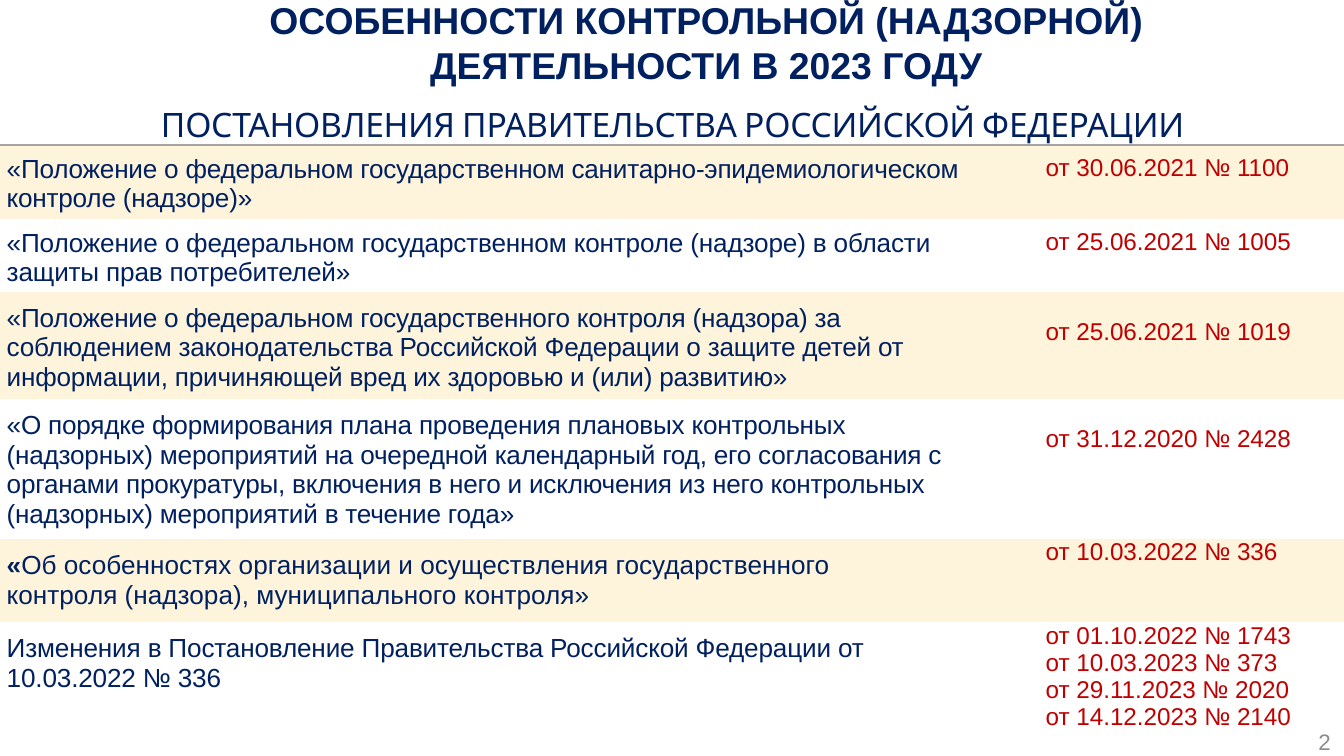
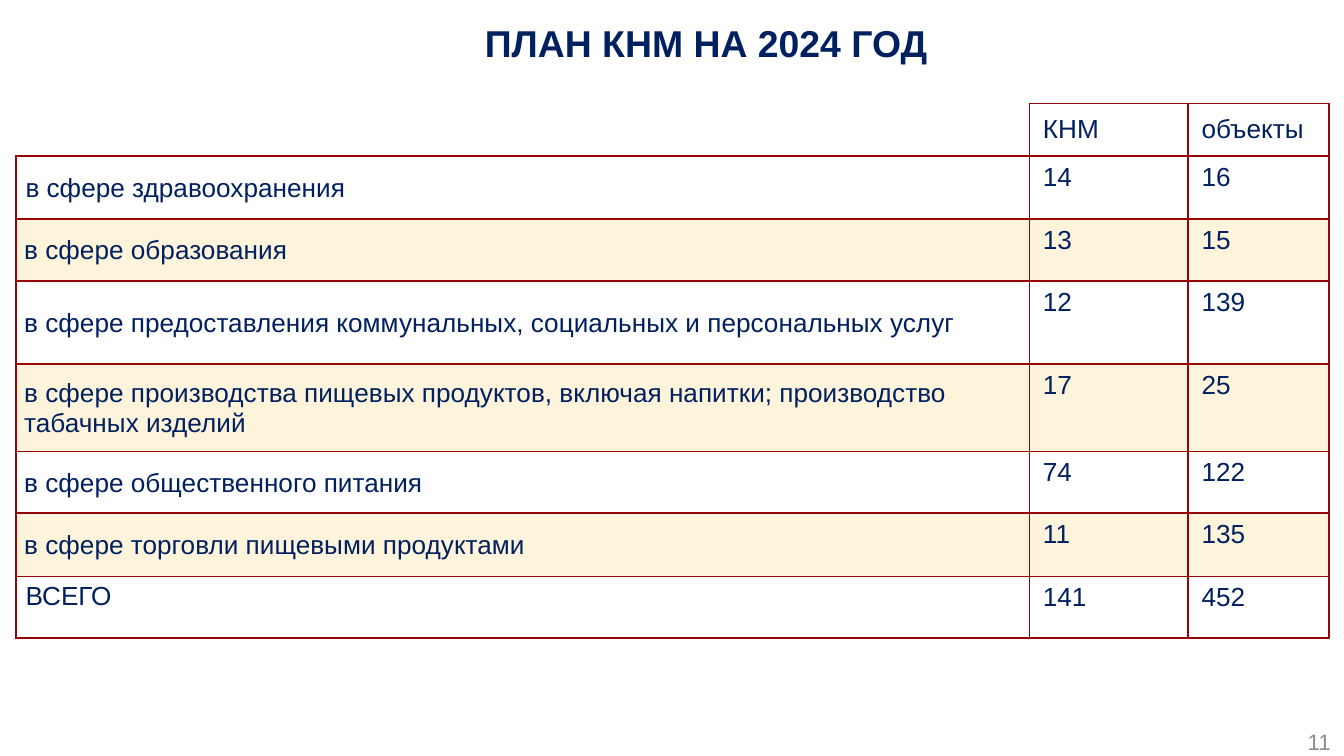
from dataclasses import dataclass

from lxml import etree
from pptx import Presentation
from pptx.dml.color import RGBColor
from pptx.enum.text import MSO_ANCHOR, PP_ALIGN
from pptx.oxml.ns import qn
from pptx.util import Inches, Pt

LEFT, CENTER, RIGHT = PP_ALIGN.LEFT, PP_ALIGN.CENTER, PP_ALIGN.RIGHT
TOP, MIDDLE = MSO_ANCHOR.TOP, MSO_ANCHOR.MIDDLE
PLAIN_TABLE_STYLE = "{2D5ABB26-0587-4C30-8999-92F81FD0307C}"
SLIDE_WIDTH = 10
SLIDE_HEIGHT = SLIDE_WIDTH * 9 / 16


@dataclass(frozen=True)
class Theme:
    navy: str = "002060"
    red: str = "C00000"
    gray: str = "8C8C8C"
    cream: str = "FEF4DC"
    rule: str = "A4A4A4"
    grid: str = "980507"
    font: str = "Arial"
    subtitle_font: str = "Cabin"
    title_size: float = 20
    subtitle_size: float = 18
    body_size: float = 14
    date_size: float = 13
    number_size: float = 12


THEME = Theme()

# Content: slide 1
DECREES_TITLE = "ОСОБЕННОСТИ КОНТРОЛЬНОЙ (НАДЗОРНОЙ)\vДЕЯТЕЛЬНОСТИ В 2023 ГОДУ"
DECREES_SUBTITLE = "ПОСТАНОВЛЕНИЯ ПРАВИТЕЛЬСТВА РОССИЙСКОЙ ФЕДЕРАЦИИ"
DECREE_COLUMNS = [7.2, 2.81]
# Row height, name, dates, top margins of both cells, right margin and tracking of the name
DECREES = [
    (0.55, "«Положение о федеральном государственном "
           "санитарно-эпидемиологическом контроле (надзоре)»",
     ["от 30.06.2021 № 1100"], 0.07, 0.07, 0, -0.15),
    (0.54, "«Положение о федеральном государственном контроле (надзоре) "
           "в области защиты прав потребителей»",
     ["от 25.06.2021 № 1005"], 0.07, 0.07, 0, -0.1),
    (0.8, "«Положение о федеральном государственного контроля (надзора) за "
          "соблюдением законодательства Российской Федерации о защите детей от "
          "информации, причиняющей вред их здоровью и (или) развитию»",
     ["от 25.06.2021 № 1019"], 0.09, 0.2, 0, -0.15),
    (1.04, "«О порядке формирования плана проведения плановых контрольных "
           "(надзорных) мероприятий на очередной календарный год, его "
           "согласования с органами прокуратуры, включения в него и исключения "
           "из него контрольных (надзорных) мероприятий в течение года»",
     ["от 31.12.2020 № 2428"], 0.09, 0.2, 0, -0.15),
    (0.62, [("«", True),
            ("Об особенностях организации и осуществления государственного "
             "контроля (надзора), муниципального контроля»", False)],
     ["от 10.03.2022 № 336"], 0.09, 0, 0.5, 0),
    (0.82, "Изменения в Постановление Правительства Российской Федерации от "
           "10.03.2022 № 336",
     ["от 01.10.2022 № 1743", "от 10.03.2023 № 373",
      "от 29.11.2023 № 2020", "от 14.12.2023 № 2140"], 0.09, 0, 0, -0.1),
]

# Content: slide 2
PLAN_TITLE = "ПЛАН КНМ НА 2024 ГОД"
PLAN_COLUMNS = [7.54, 1.18, 1.05]
PLAN = [
    (0.39, "", "КНМ", "объекты"),
    (0.47, "в сфере здравоохранения", "14", "16"),
    (0.46, "в сфере образования", "13", "15"),
    (0.62, "в сфере предоставления коммунальных, социальных и персональных услуг",
     "12", "139"),
    (0.65, "в сфере производства пищевых продуктов, включая напитки; "
           "производство табачных изделий", "17", "25"),
    (0.46, "в сфере общественного питания", "74", "122"),
    (0.47, "в сфере торговли пищевыми продуктами", "11", "135"),
    (0.46, "ВСЕГО", "141", "452"),
]


def write_text(holder, paragraphs, size=THEME.body_size, color=THEME.navy,
               font=THEME.font, bold=False, align=LEFT, tracking=0):
    """Write paragraphs; each is a string or a list of (text, bold) runs."""
    frame = holder.text_frame
    for index, content in enumerate(paragraphs):
        paragraph = frame.add_paragraph() if index else frame.paragraphs[0]
        paragraph.alignment = align
        paragraph.font.size = Pt(size)
        runs = [(content, bold)] if isinstance(content, str) else content
        for text, run_bold in runs:
            for part_index, part in enumerate(text.split("\v")):
                if part_index:
                    paragraph.add_line_break()
                run = paragraph.add_run()
                run.text = part
                run.font.name = font
                run.font.size = Pt(size)
                run.font.bold = run_bold
                run.font.color.rgb = RGBColor.from_string(color)
                if tracking:
                    run._r.get_or_add_rPr().set("spc", str(round(tracking * 100)))


def add_text(slide, box, text, anchor=TOP, margins=(0, 0, 0, 0), **style):
    shape = slide.shapes.add_textbox(*map(Inches, box))
    frame = shape.text_frame
    frame.word_wrap = True
    frame.vertical_anchor = anchor
    (frame.margin_left, frame.margin_top,
     frame.margin_right, frame.margin_bottom) = map(Inches, margins)
    write_text(shape, [text], **style)


def add_slide(presentation, title, number):
    """Start a slide with the shared title and page number."""
    slide = presentation.slides.add_slide(presentation.slide_layouts[6])
    add_text(slide, (0.51, 0, 9.49, 0.63), title, anchor=MIDDLE, bold=True,
             size=THEME.title_size, align=CENTER)
    add_text(slide, (9.33, 5.41, 0.67, 0.21), number, anchor=MIDDLE,
             margins=(0.1, 0, 0.1, 0), size=THEME.number_size,
             color=THEME.gray, align=RIGHT)
    return slide


def add_plain_table(slide, left, top, columns, heights):
    frame = slide.shapes.add_table(
        len(heights), len(columns), Inches(left), Inches(top),
        Inches(sum(columns)), Inches(sum(heights)))
    frame.element.find(".//" + qn("a:tableStyleId")).text = PLAIN_TABLE_STYLE
    table = frame.table
    table.first_row = table.horz_banding = False
    for column, width in zip(table.columns, columns):
        column.width = Inches(width)
    for row, height in zip(table.rows, heights):
        row.height = Inches(height)
    return table


def fill_cell(cell, paragraphs, margins, anchor=TOP, shaded=False,
              sides="", line_color=THEME.grid, **style):
    """Set text, margins, fill and the borders named in sides (L, R, T, B)."""
    (cell.margin_left, cell.margin_top,
     cell.margin_right, cell.margin_bottom) = map(Inches, margins)
    cell.vertical_anchor = anchor
    if shaded:
        cell.fill.solid()
        cell.fill.fore_color.rgb = RGBColor.from_string(THEME.cream)
    else:
        cell.fill.background()
    properties = cell._tc.get_or_add_tcPr()
    for index, side in enumerate(sides):
        border = etree.Element(qn("a:ln" + side), w=str(Pt(1)))
        solid = etree.SubElement(border, qn("a:solidFill"))
        etree.SubElement(solid, qn("a:srgbClr"), val=line_color)
        properties.insert(index, border)
    write_text(cell, paragraphs, **style)


def build_decrees(presentation):
    slide = add_slide(presentation, DECREES_TITLE, "2")
    add_text(slide, (0.91, 0.77, 8.19, 0.31), DECREES_SUBTITLE,
             font=THEME.subtitle_font, size=THEME.subtitle_size,
             align=CENTER, tracking=-0.15)
    table = add_plain_table(slide, 0, 1.08, DECREE_COLUMNS,
                            [row[0] for row in DECREES])
    for index, row in enumerate(DECREES):
        _, name, dates, name_top, date_top, name_right, tracking = row
        look = {"shaded": index % 2 == 0, "sides": "" if index else "T",
                "line_color": THEME.rule}
        fill_cell(table.cell(index, 0), [name], (0.05, name_top, name_right, 0),
                  tracking=tracking, **look)
        fill_cell(table.cell(index, 1), dates, (0.58, date_top, 0, 0),
                  size=THEME.date_size, color=THEME.red, **look)


def build_plan(presentation):
    slide = add_slide(presentation, PLAN_TITLE, "11")
    table = add_plain_table(slide, 0.12, 0.77, PLAN_COLUMNS,
                            [row[0] for row in PLAN])
    last = len(PLAN) - 1
    for index, (_, label, *values) in enumerate(PLAN):
        shaded = index > 0 and index % 2 == 0
        is_total = index == last
        fill_cell(table.cell(index, 0), [label] if label else [],
                  (0.07 if index in (1, last) else 0.06,
                   0.04 if is_total else 0.01, 0.01, 0),
                  anchor=TOP if is_total else MIDDLE, shaded=shaded,
                  sides="LRTB" if index else "RB")
        for column, value in enumerate(values, start=1):
            fill_cell(table.cell(index, column), [value], (0.1, 0.05, 0.1, 0.05),
                      anchor=TOP if index else MIDDLE, shaded=shaded, sides="LRTB")


def main():
    presentation = Presentation()
    presentation.slide_width = Inches(SLIDE_WIDTH)
    presentation.slide_height = Inches(SLIDE_HEIGHT)
    build_decrees(presentation)
    build_plan(presentation)
    presentation.save("out.pptx")


if __name__ == "__main__":
    main()
